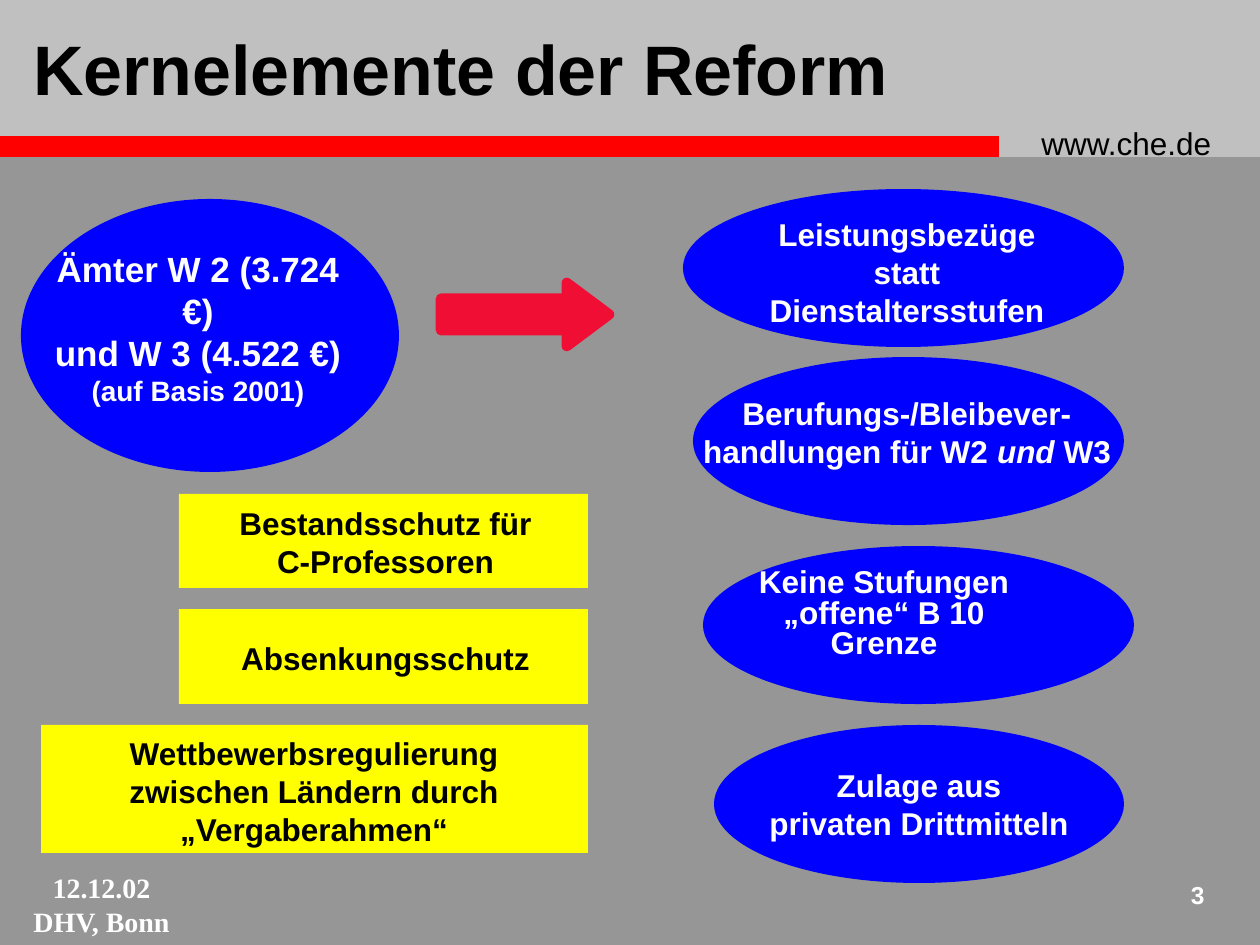
from pptx import Presentation
from pptx.dml.color import RGBColor
from pptx.enum.shapes import MSO_SHAPE
from pptx.enum.text import MSO_ANCHOR, PP_ALIGN
from pptx.util import Pt

PX = 914400 / 126
BLACK = RGBColor(0x00, 0x00, 0x00)
WHITE = RGBColor(0xFF, 0xFF, 0xFF)
GREY = RGBColor(0x96, 0x96, 0x96)
SILVER = RGBColor(0xC0, 0xC0, 0xC0)
RED = RGBColor(0xFF, 0x00, 0x00)
CRIMSON = RGBColor(0xF0, 0x0E, 0x34)
BLUE = RGBColor(0x00, 0x00, 0xFF)
YELLOW = RGBColor(0xFF, 0xFF, 0x00)

# Each entry: box of the shape, box of its label, label lines
BENEFITS = [
    ((683, 189, 441, 158), (757, 209, 300, 126),
     ["Leistungsbezüge", "statt", "Dienstaltersstufen"]),
    ((693, 357, 431, 168), (687, 388, 440, 88),
     ["Berufungs-/Bleibever-", "handlungen für W2 *und* W3"]),
    ((703, 546, 431, 158), (741, 583, 286, 64),
     ["Keine Stufungen", "„offene“ B 10 Grenze"]),
    ((714, 725, 410, 158), (749, 760, 340, 88),
     ["Zulage aus", "privaten Drittmitteln"]),
]
SAFEGUARDS = [
    ((179, 494, 409, 94), (219, 498, 333, 88),
     ["Bestandsschutz für", "C-Professoren"]),
    ((179, 609, 409, 95), (219, 633, 333, 50), ["Absenkungsschutz"]),
    ((41, 725, 547, 128), (41, 728, 546, 126),
     ["Wettbewerbsregulierung", "zwischen Ländern durch", "„Vergaberahmen“"]),
]


def emu(box):
    return [round(length * PX) for length in box]


def add_block(slide, preset, box, color):
    block = slide.shapes.add_shape(preset, *emu(box))
    block.shadow.inherit = False
    block.fill.solid()
    block.fill.fore_color.rgb = color
    block.line.fill.background()
    return block


def add_text(slide, box, lines, size, color, align=PP_ALIGN.CENTER,
             bold=True, font="Arial", wrap=True):
    """Add a middle-anchored text box; *stars* in a line mark italics."""
    frame = slide.shapes.add_textbox(*emu(box)).text_frame
    frame.word_wrap = wrap
    frame.vertical_anchor = MSO_ANCHOR.MIDDLE
    frame.text = "\n".join(lines)
    for paragraph, line in zip(frame.paragraphs, lines):
        paragraph.alignment = align
        if "*" in line:
            paragraph.clear()
            for index, part in enumerate(line.split("*")):
                run = paragraph.add_run()
                run.text = part
                run.font.italic = index % 2 == 1
        for run in paragraph.runs:
            run.font.name = font
            run.font.size = Pt(size)
            run.font.bold = bold
            run.font.color.rgb = color
    return frame


def add_header(slide, left, top, width, height):
    add_block(slide, MSO_SHAPE.RECTANGLE, (left, top, width, height), SILVER)
    stripe_top = top + height - 21
    add_block(slide, MSO_SHAPE.RECTANGLE, (left, stripe_top, 999, 21), RED)
    add_text(slide, (left + 1029, stripe_top - 18, 221, 50), ["www.che.de"],
             18, BLACK, PP_ALIGN.LEFT, bold=False)
    add_text(slide, (left + 21, top, 1018, stripe_top - top),
             ["Kernelemente der Reform"], 40, BLACK, PP_ALIGN.LEFT)


def add_offices(slide, left, top, width, height):
    """Add the ellipse with the W offices and the arrow to its right."""
    add_block(slide, MSO_SHAPE.OVAL, (left, top, width, height), BLUE)
    label = add_text(slide, (left + 17, top + 63, 320, 130),
                     ["Ämter W 2 (3.724 €)", "und W 3 (4.522 €)",
                      "(auf Basis 2001)"], 20, WHITE)
    label.paragraphs[-1].runs[0].font.size = Pt(16)
    arrow = add_block(slide, MSO_SHAPE.RIGHT_ARROW,
                      (left + width + 42, top + 84, 168, 63), CRIMSON)
    arrow.adjustments[0] = 0.5
    arrow.adjustments[1] = 0.67
    arrow.line.color.rgb = CRIMSON
    arrow.line.width = Pt(6)


def add_benefits(slide):
    for box, label_box, lines in BENEFITS:
        add_block(slide, MSO_SHAPE.OVAL, box, BLUE)
        label = add_text(slide, label_box, lines, 18, WHITE)
        if lines[0] == "Keine Stufungen":
            for paragraph in label.paragraphs:
                paragraph.line_spacing = 0.8


def add_safeguards(slide):
    for box, label_box, lines in SAFEGUARDS:
        add_block(slide, MSO_SHAPE.RECTANGLE, box, YELLOW)
        add_text(slide, label_box, lines, 18, BLACK)


def add_footer(slide, left, top, width, height):
    add_text(slide, (left, top, 165, height), ["12.12.02", "DHV, Bonn"],
             16, WHITE, font="Times New Roman", wrap=False)
    add_text(slide, (left + width - 73, top + 4, 73, 53), ["3"],
             14, WHITE, PP_ALIGN.RIGHT)


def main():
    presentation = Presentation()
    presentation.slide_width, presentation.slide_height = emu((1260, 945))
    slide = presentation.slides.add_slide(presentation.slide_layouts[6])
    slide.background.fill.solid()
    slide.background.fill.fore_color.rgb = GREY
    add_header(slide, 0, 0, 1260, 157)
    add_offices(slide, 21, 199, 378, 273)
    add_benefits(slide)
    add_safeguards(slide)
    add_footer(slide, 19, 864, 1198, 81)
    presentation.save("out.pptx")


if __name__ == "__main__":
    main()
